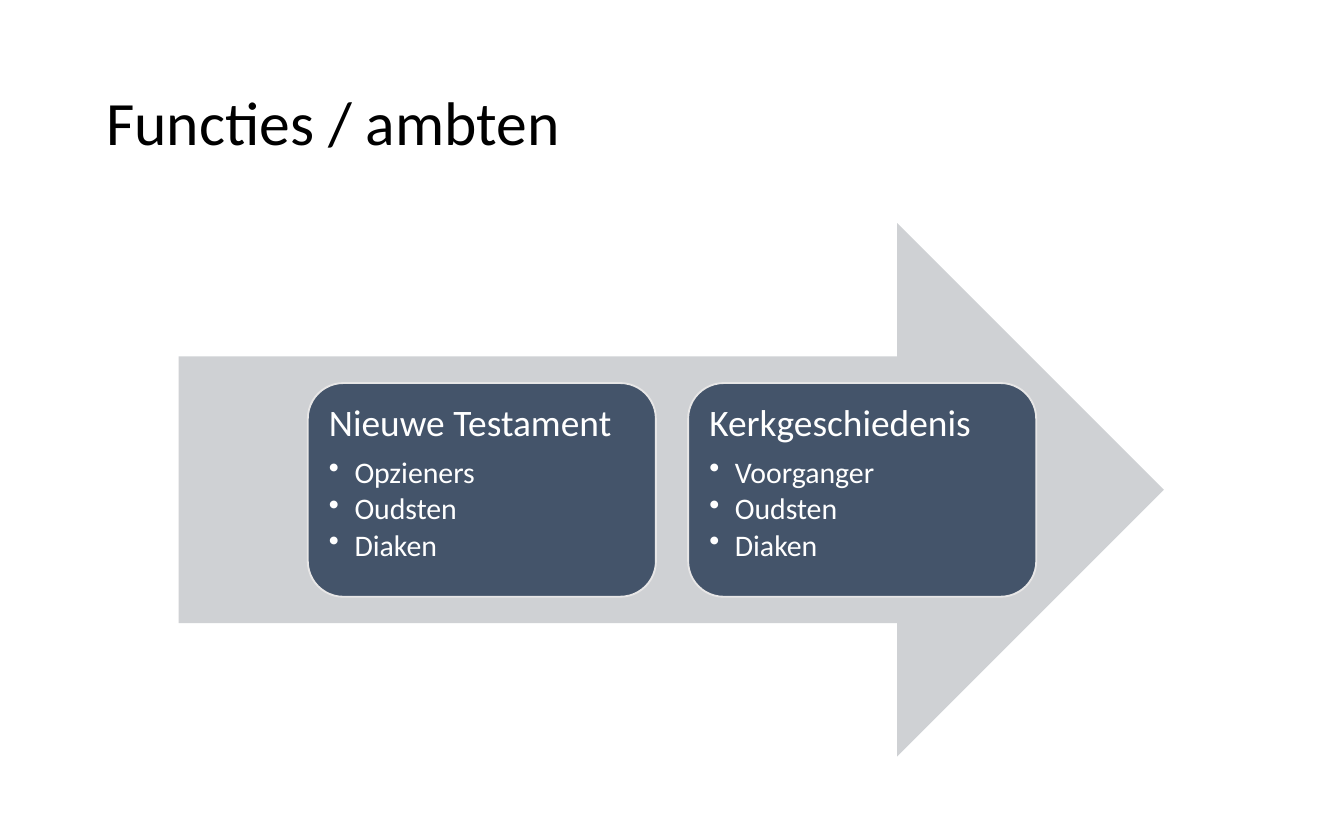
import pptx
import pptx.dml.color
import pptx.enum.shapes
import pptx.enum.text
import pptx.oxml.ns
import pptx.util
from lxml import etree

Inches = pptx.util.Inches
Pt = pptx.util.Pt
RGBColor = pptx.dml.color.RGBColor
MSO_SHAPE = pptx.enum.shapes.MSO_SHAPE
MSO_ANCHOR = pptx.enum.text.MSO_ANCHOR
PP_ALIGN = pptx.enum.text.PP_ALIGN

FONT = "Calibri"
BLACK = RGBColor(0x00, 0x00, 0x00)
WHITE = RGBColor(0xFF, 0xFF, 0xFF)
GREY = RGBColor(0xCF, 0xD1, 0xD4)
NAVY = RGBColor(0x44, 0x54, 0x6A)
PALE = RGBColor(0xE7, 0xE6, 0xE6)

CARDS = [
    ("Nieuwe Testament", ["Opzieners", "Oudsten", "Diaken"]),
    ("Kerkgeschiedenis", ["Voorganger", "Oudsten", "Diaken"]),
]
CARD_LEFT, CARD_TOP, CARD_W, CARD_H = 2.29, 2.85, 2.59, 1.59
CARD_STEP = 2.83


class Deck:
    """Holds the style and the slide being built."""

    def __init__(self, s):
        self.s = s

    def paragraph(self, p, text, size, color, after=0):
        p.alignment = PP_ALIGN.LEFT
        p.line_spacing = 0.9
        p.space_after = Pt(after)
        r = p.add_run()
        r.text = text
        r.font.name = FONT
        r.font.size = Pt(size)
        r.font.color.rgb = color

    def bullet(self, p, text):
        self.paragraph(p, text, 16, WHITE, 2.2)
        p.level = 1
        pPr = p._p.get_or_add_pPr()
        pPr.set("marL", str(Inches(0.19)))
        pPr.set("indent", str(Inches(-0.19)))
        bu = etree.SubElement(pPr, pptx.oxml.ns.qn("a:buChar"))
        bu.set("char", "•")

    def title(self, text, left, top, width, height):
        sp = self.s.shapes.title
        sp.left, sp.top = Inches(left), Inches(top)
        sp.width, sp.height = Inches(width), Inches(height)
        tf = sp.text_frame
        tf.vertical_anchor = MSO_ANCHOR.MIDDLE
        self.paragraph(tf.paragraphs[0], text, 33, BLACK)

    def shape(self, kind, left, top, width, height, fill, line=None):
        sp = self.s.shapes.add_shape(
            kind, Inches(left), Inches(top), Inches(width), Inches(height))
        sp.shadow.inherit = False
        sp.fill.solid()
        sp.fill.fore_color.rgb = fill
        if line is None:
            sp.line.fill.background()
        else:
            sp.line.color.rgb = line
            sp.line.width = Pt(1)
        return sp

    def card(self, left, heading, items):
        sp = self.shape(MSO_SHAPE.ROUNDED_RECTANGLE, left, CARD_TOP,
                        CARD_W, CARD_H, NAVY, PALE)
        tf = sp.text_frame
        tf.word_wrap = True
        tf.vertical_anchor = MSO_ANCHOR.TOP
        tf.margin_left = tf.margin_right = Inches(0.08)
        tf.margin_top = tf.margin_bottom = Inches(0.08)
        self.paragraph(tf.paragraphs[0], heading, 20, WHITE, 7)
        for item in items:
            self.bullet(tf.add_paragraph(), item)


def main():
    prs = pptx.Presentation()
    prs.slide_width, prs.slide_height = Inches(10), Inches(6.25)
    deck = Deck(prs.slides.add_slide(prs.slide_layouts[5]))
    deck.title("Functies / ambten", 0.69, 0.33, 8.62, 1.21)
    deck.shape(MSO_SHAPE.RIGHT_ARROW, 1.33, 1.66, 7.33, 3.97, GREY)
    for i, (heading, items) in enumerate(CARDS):
        deck.card(CARD_LEFT + i * CARD_STEP, heading, items)
    prs.save("out.pptx")


if __name__ == "__main__":
    main()
